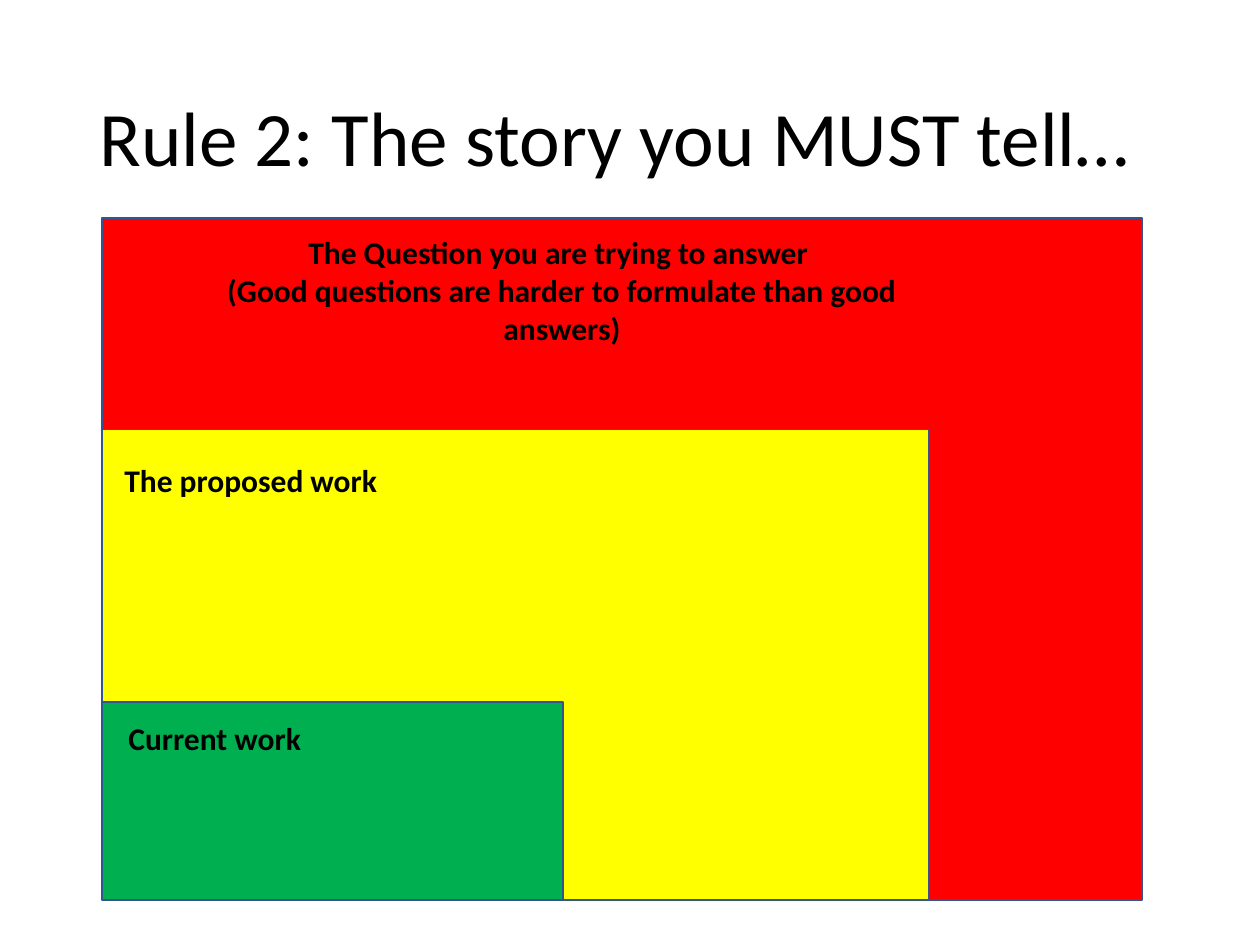
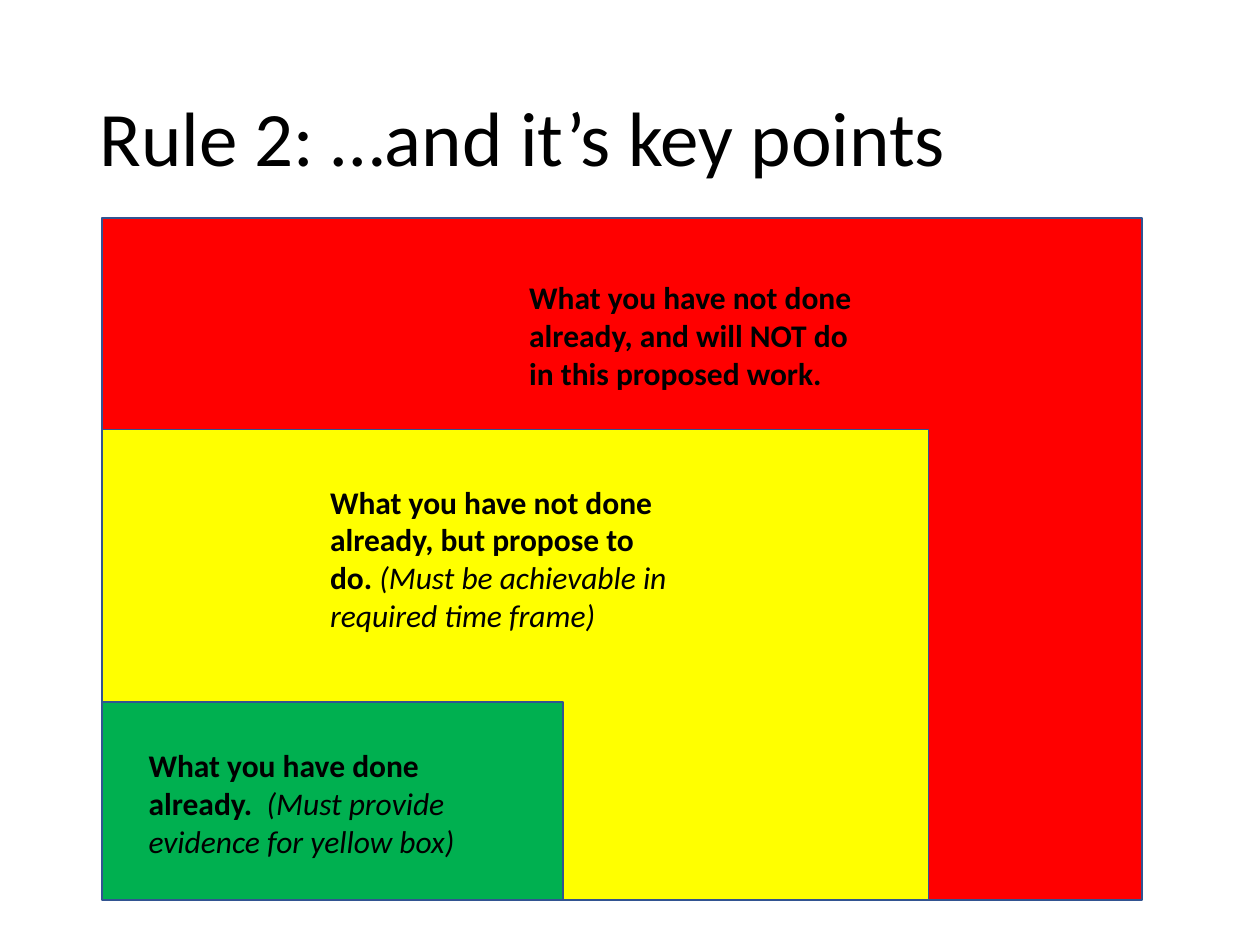
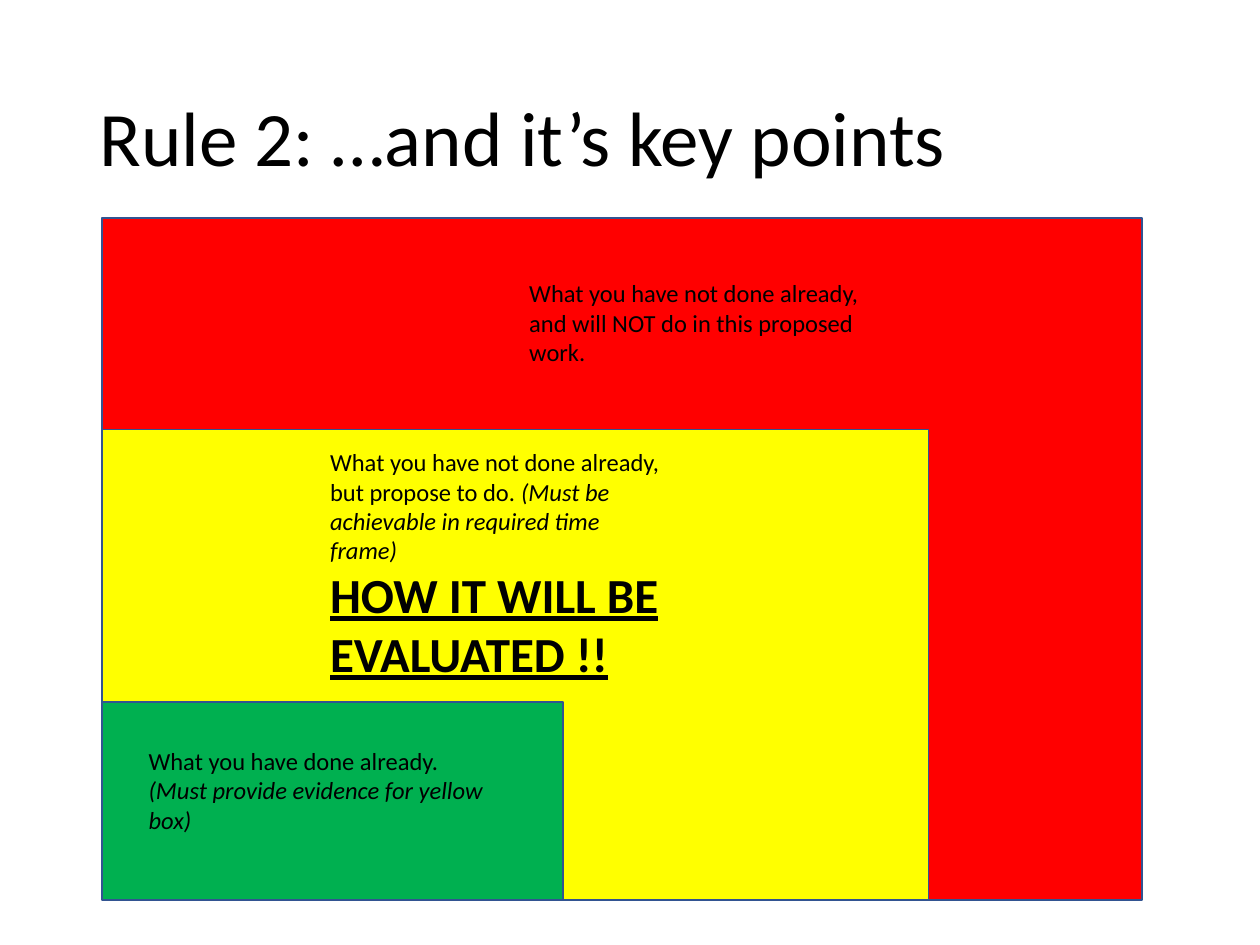
import pptx
import pptx.dml.color
import pptx.enum.shapes
import pptx.enum.text
import pptx.util

Pt = pptx.util.Pt
ALIGN = pptx.enum.text.PP_ALIGN
ANCHOR = pptx.enum.text.MSO_ANCHOR
FIT = pptx.enum.text.MSO_AUTO_SIZE

FONT = "Calibri"
BLACK, OUTLINE = "000000", "325491"

# Boxes are left, top, width, height in points
TITLE_BOX = (49.7, 28.8, 620.6, 104.4)
DIAGRAM_BOX = (58.4, 124.6, 594, 389.5)
# Nested scopes share the diagram's bottom-left corner: colour, width, height
SCOPES = [("FF0000", 594, 389.5), ("FFFF00", 472.3, 268.6), ("00B050", 263.5, 113)]
LABEL_W = 207.4

# Run styles
PLAIN, BOLD, ITALIC, SHOUT = {}, {"bold": True}, {"italic": True}, {
    "bold": True, "underline": True, "size": Pt(28)}

KEY_TITLE = "Rule 2: …and it’s key points"
DONE = "What you have done already.  "
EVIDENCE = "(Must provide evidence for yellow box)"
PROPOSED = "What you have not done already, but propose to do. "
ACHIEVABLE = "(Must be achievable in required time frame)"
NOT_DONE = "What you have not done already, and will NOT do in this proposed work."


def rgb(color):
    return pptx.dml.color.RGBColor.from_string(color)


def add_text(slide, box, paragraphs, size, align=ALIGN.LEFT):
    """Each paragraph is a list of (text, style) runs."""
    sp = slide.shapes.add_textbox(*map(Pt, box))
    tf = sp.text_frame
    tf.word_wrap = True
    for i, runs in enumerate(paragraphs):
        p = tf.add_paragraph() if i else tf.paragraphs[0]
        p.alignment = align
        for text, style in runs:
            r = p.add_run()
            r.text = text
            r.font.name, r.font.size = FONT, Pt(size)
            r.font.color.rgb = rgb(BLACK)
            for name, value in style.items():
                setattr(r.font, name, value)
    return tf


def add_title(slide, box, title):
    tf = add_text(slide, box, [[(title, PLAIN)]], 44)
    tf.vertical_anchor = ANCHOR.MIDDLE
    tf.paragraphs[0].line_spacing = 0.9


def add_scopes(slide, box):
    left, top, _, height = box
    for color, w, h in SCOPES:
        sp = slide.shapes.add_shape(
            pptx.enum.shapes.MSO_SHAPE.RECTANGLE,
            Pt(left), Pt(top + height - h), Pt(w), Pt(h))
        sp.shadow.inherit = False
        sp.fill.solid()
        sp.fill.fore_color.rgb = rgb(color)
        sp.line.color.rgb = rgb(OUTLINE)
        sp.line.width = Pt(1)


def add_labels(slide, box, labels, size):
    """Label positions are offsets from the diagram's top-left corner."""
    left, top = box[:2]
    for dx, dy, w, h, align, paragraphs in labels:
        tf = add_text(slide, (left + dx, top + dy, w, h), paragraphs, size, align)
        tf.auto_size = FIT.SHAPE_TO_FIT_TEXT


def add_story_slide(prs, title, labels, size):
    slide = prs.slides.add_slide(prs.slide_layouts[6])
    add_title(slide, TITLE_BOX, title)
    add_scopes(slide, DIAGRAM_BOX)
    add_labels(slide, DIAGRAM_BOX, labels, size)


def key_points(style, heights, proposed_top, extra=()):
    """Labels of the key points slides, from the green scope to the red."""
    done_h, proposed_h, not_done_h = heights
    return [
        (19.4, 298.1, LABEL_W, done_h, ALIGN.LEFT,
         [[(DONE, style), (EVIDENCE, ITALIC)]]),
        (123.1, proposed_top, LABEL_W, proposed_h, ALIGN.LEFT,
         [[(PROPOSED, style), (ACHIEVABLE, ITALIC)], *extra]),
        (236.9, 31, LABEL_W, not_done_h, ALIGN.LEFT, [[(NOT_DONE, style)]]),
    ]


def main():
    prs = pptx.Presentation()
    prs.slide_width, prs.slide_height = Pt(720), Pt(540)

    # The story
    add_story_slide(prs, "Rule 2: The story you MUST tell…", [
        (7.9, 283, LABEL_W, 29, ALIGN.LEFT, [[("Current work", BOLD)]]),
        (-18.8, 135.3, LABEL_W, 29, ALIGN.CENTER, [[("The proposed work", BOLD)]]),
        (35.2, 5, 455, 72.7, ALIGN.CENTER, [
            [("The Question you are trying to answer ", BOLD)],
            [("(Good questions are harder to formulate than good answers)", BOLD)]]),
    ], 18)

    # Key points, then key points with evaluation
    add_story_slide(prs, KEY_TITLE, key_points(BOLD, (72.7, 94.3, 72.7), 147.6), 18)
    add_story_slide(prs, KEY_TITLE, key_points(
        PLAIN, (58.3, 143.3, 58.3), 127.4,
        [[("HOW IT WILL BE EVALUATED !!", SHOUT)]]), 14)

    prs.save("out.pptx")


if __name__ == "__main__":
    main()
